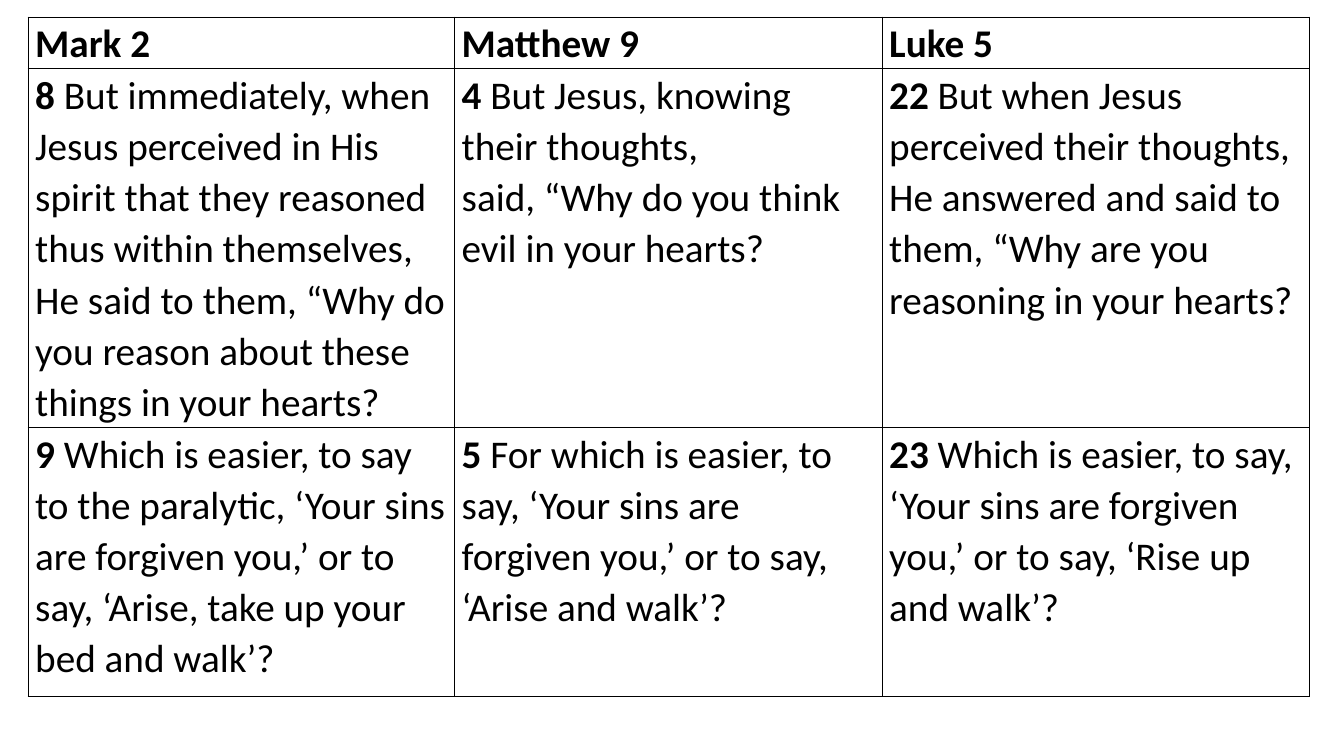
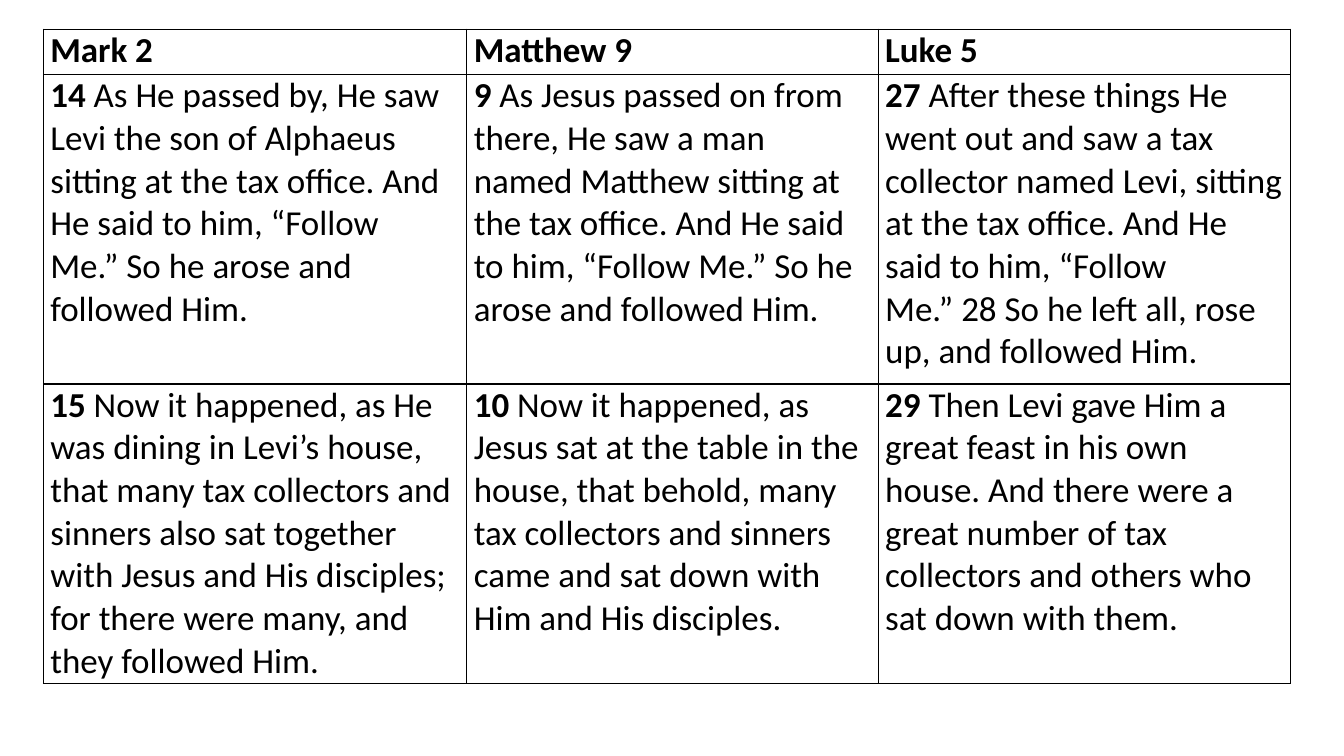
from dataclasses import dataclass

from lxml.etree import SubElement
from pptx import Presentation
from pptx.dml.color import RGBColor
from pptx.enum.text import MSO_ANCHOR
from pptx.oxml.ns import qn
from pptx.util import Inches, Pt


@dataclass(frozen=True)
class Theme:
    font: str = "Calibri"
    ink: str = "000000"
    paper: str = "FFFFFF"
    large: int = 28
    medium: int = 25
    border: int = 1
    side_margin: float = 0.07
    slide_width: float = 13.33
    slide_height: float = 7.5


@dataclass(frozen=True)
class Grid:
    left: float
    top: float
    columns: tuple
    rows: tuple
    size: int
    line_spacing: float = 1.0


THEME = Theme()
NO_BREAK = chr(160)
HEADINGS = ("Mark 2", "Matthew 9", "Luke 5")

QUESTION_GRID = Grid(0.28, 0.17, (4.23, 4.24, 4.24), (0.51, 3.56, 2.67), THEME.large, 1.07)
CALLING_GRID = Grid(0.43, 0.29, (4.2, 4.08, 4.09), (0.45, 3.07, 2.97), THEME.medium)

QUESTION_VERSES = (
    (
        ("8", "But immediately, when Jesus perceived in His spirit that they reasoned thus "
              "within themselves, He said to them,~“Why do you reason about these things "
              "in your hearts?"),
        ("4", "But Jesus, knowing their thoughts, said,~“Why do you think evil in your hearts?"),
        ("22", "But when Jesus perceived their thoughts, He answered and said to them, "
               "“Why are you reasoning in your hearts?"),
    ),
    (
        ("9", "Which is easier, to say to the paralytic, ‘Your~sins are forgiven you,’ "
              "or to say, ‘Arise, take up your bed and walk’?"),
        ("5", "For which is easier, to say, ‘Your~sins are forgiven you,’ or to say, "
              "‘Arise and walk’?"),
        ("23", "Which is easier, to say, ‘Your sins are forgiven you,’ or to say, "
               "‘Rise up and walk’?"),
    ),
)

CALLING_VERSES = (
    (
        ("14", "As He passed by, He saw Levi the~son~of Alphaeus sitting at the tax office. "
               "And He said to him,~“Follow Me.”~So he arose and followed Him."),
        ("9", "As Jesus passed on from there, He saw a man named Matthew sitting at the tax "
              "office. And He said to him,~“Follow Me.”~So he arose and followed Him."),
        ("27", "After these things He went out and saw a tax collector named Levi, sitting at "
               "the tax office. And He said to him,~“Follow Me.”~28~So he left all, rose up, "
               "and followed Him."),
    ),
    (
        ("15", "Now it happened, as He was dining in~Levi’s~house, that many tax collectors "
               "and sinners also sat together with Jesus and His disciples; for there were "
               "many, and they followed Him."),
        ("10", "Now it happened, as Jesus sat at the table in the house,~that~behold, many "
               "tax collectors and sinners came and sat down with Him and His disciples."),
        ("29", "Then Levi gave Him a great feast in his own house. And there were a great "
               "number of tax collectors and others who sat down with them."),
    ),
)


def add_text(para, text, *, size, bold=False, color=THEME.ink):
    span = para.add_run()
    span.text = text.replace("~", NO_BREAK)
    span.font.name = THEME.font
    span.font.size = Pt(size)
    span.font.bold = bold
    span.font.color.rgb = RGBColor.from_string(color)


def add_borders(cell):
    properties = cell._tc.get_or_add_tcPr()
    for position, side in enumerate(("lnL", "lnR", "lnT", "lnB")):
        line = SubElement(properties, qn(f"a:{side}"), w=str(Pt(THEME.border)))
        fill = SubElement(line, qn("a:solidFill"))
        SubElement(fill, qn("a:srgbClr"), val=THEME.ink)
        properties.remove(line)
        properties.insert(position, line)


def style_cell(cell):
    cell.margin_left = cell.margin_right = Inches(THEME.side_margin)
    cell.margin_top = cell.margin_bottom = 0
    cell.vertical_anchor = MSO_ANCHOR.TOP
    cell.fill.solid()
    cell.fill.fore_color.rgb = RGBColor.from_string(THEME.paper)
    add_borders(cell)


def fill_cell(cell, grid, lead, body=""):
    style_cell(cell)
    para = cell.text_frame.paragraphs[0]
    para.line_spacing = grid.line_spacing
    add_text(para, lead, size=grid.size, bold=True)
    if body:
        add_text(para, f"~{body}", size=grid.size)


def add_verse_table(page, grid, verses):
    frame = page.shapes.add_table(
        len(grid.rows), len(grid.columns), Inches(grid.left), Inches(grid.top),
        Inches(sum(grid.columns)), Inches(sum(grid.rows)))
    table = frame.table
    table.first_row = table.horz_banding = False
    for column, width in zip(table.columns, grid.columns):
        column.width = Inches(width)
    for row, height in zip(table.rows, grid.rows):
        row.height = Inches(height)
    contents = (tuple((heading,) for heading in HEADINGS), *verses)
    for row, entries in zip(table.rows, contents):
        for cell, entry in zip(row.cells, entries):
            fill_cell(cell, grid, *entry)


def main():
    deck = Presentation()
    deck.slide_width = Inches(THEME.slide_width)
    deck.slide_height = Inches(THEME.slide_height)
    for grid, verses in ((QUESTION_GRID, QUESTION_VERSES), (CALLING_GRID, CALLING_VERSES)):
        page = deck.slides.add_slide(deck.slide_layouts[6])
        add_verse_table(page, grid, verses)
    deck.save("out.pptx")


if __name__ == "__main__":
    main()
